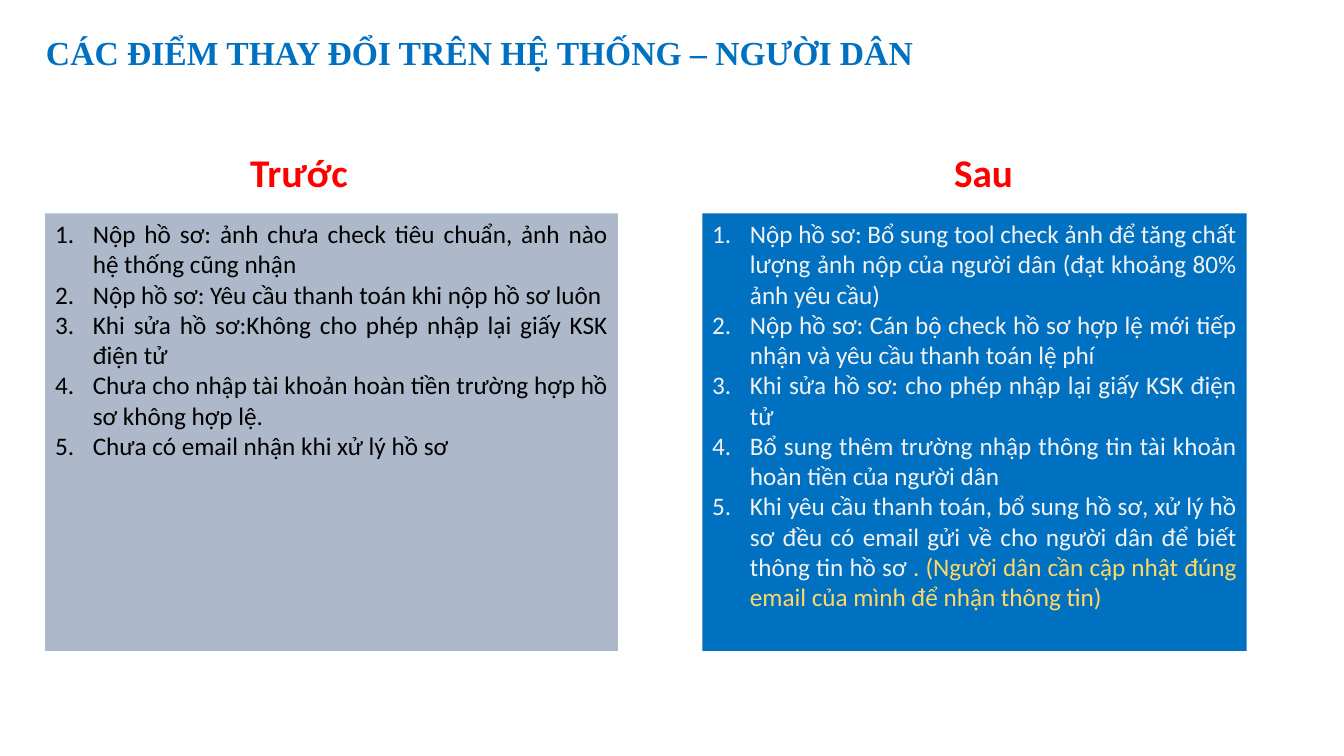
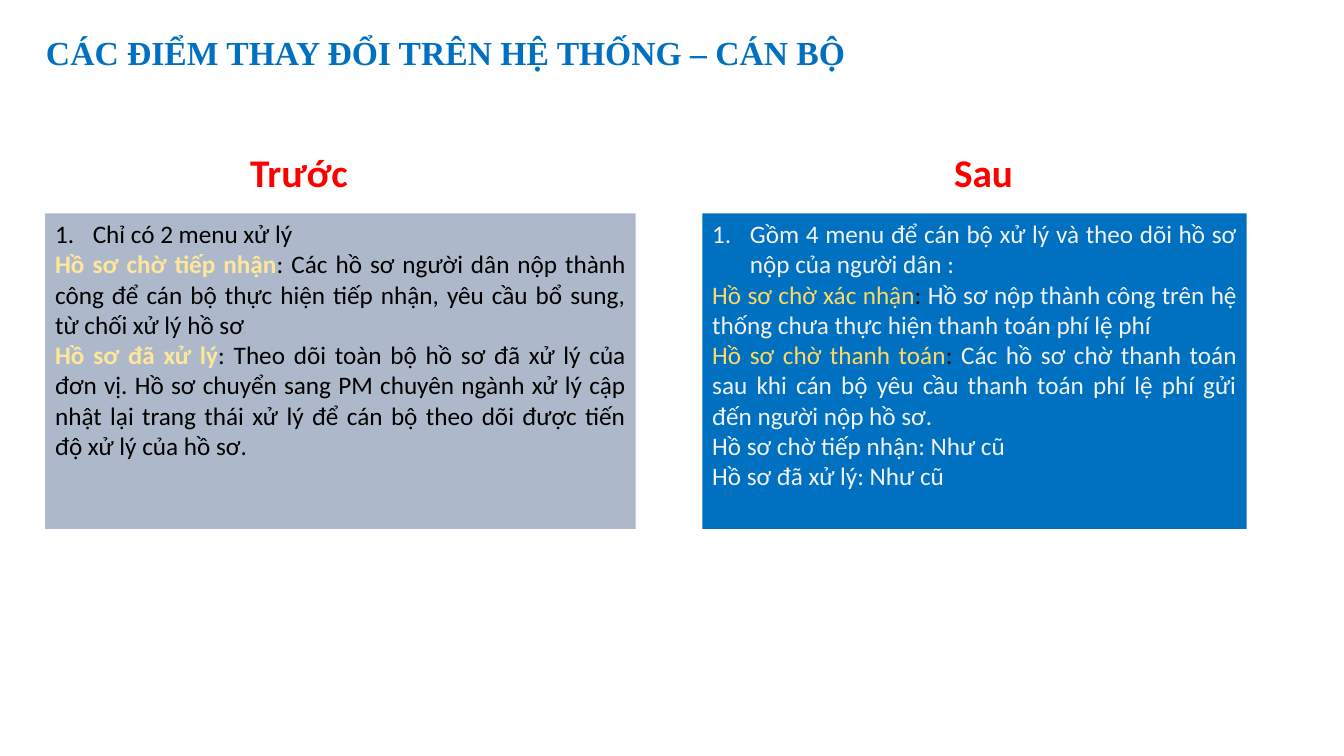
from lxml.etree import SubElement as Sub
from pptx import Presentation
from pptx.dml.color import RGBColor as RGB
from pptx.enum.shapes import MSO_SHAPE as Shape
from pptx.enum.text import MSO_ANCHOR as Anchor, PP_ALIGN as Align
from pptx.oxml.ns import qn
from pptx.util import Cm, Pt

BLUE = RGB(0x00, 0x70, 0xC0)
GRAY = RGB(0xAD, 0xB9, 0xCA)
RED = RGB(0xFF, 0x00, 0x00)
BLACK = RGB(0x00, 0x00, 0x00)
PALE = RGB(0xF2, 0xF2, 0xF2)
GOLD = RGB(0xFF, 0xD9, 0x66)
CREAM = RGB(0xFF, 0xE6, 0x99)

TITLE = {"name": "Times New Roman", "size": Pt(24), "bold": True}
HEAD = {"name": "Calibri", "size": Pt(28), "bold": True}
BODY = {"name": "Calibri", "size": Pt(18), "bold": False}
STRONG = {**BODY, "bold": True}

LEFT, RIGHT, TOP = 1.14, 17.7, 5.38
AFTER_W = 13.72
INDENT = Cm(0.95)


class Deck:
    def __init__(self):
        self.prs = Presentation()
        self.prs.slide_width, self.prs.slide_height = Cm(33.87), Cm(19.05)
        self.slide = None

    def start(self, title):
        self.slide = self.prs.slides.add_slide(self.prs.slide_layouts[6])
        frame = self.label(title, 0.91, 0.79, 32.03, 1.17, TITLE, BLUE)
        frame.vertical_anchor = Anchor.MIDDLE
        frame.paragraphs[0].line_spacing = 0.9
        self.label("Trước ", 4.37, 3.61, 6.55, 1.45, HEAD, RED, Align.CENTER)
        self.label("Sau", 21.51, 3.61, 6.55, 1.45, HEAD, RED, Align.CENTER)

    def run(self, para, text, style, ink):
        run = para.add_run()
        run.text = text
        for key, value in style.items():
            setattr(run.font, key, value)
        run.font.color.rgb = ink

    def label(self, text, x, y, w, h, style, ink, align=Align.LEFT):
        box = self.slide.shapes.add_textbox(Cm(x), Cm(y), Cm(w), Cm(h))
        frame = box.text_frame
        frame.word_wrap = True
        para = frame.paragraphs[0]
        para.alignment = align
        self.run(para, text, style, ink)
        return frame

    def number(self, para):
        """Give the paragraph a hanging automatic number."""
        props = para._p.get_or_add_pPr()
        props.set("marL", str(INDENT))
        props.set("indent", str(-INDENT))
        Sub(props, qn("a:buFont"), typeface="+mj-lt")
        Sub(props, qn("a:buAutoNum"), type="arabicPeriod")

    def panel(self, x, w, h, fill, ink, steps, notes=()):
        """Draw a filled box; each line is text or a list of runs.

        A run is text, or a tuple of text, colour and style.
        """
        box = self.slide.shapes.add_shape(
            Shape.RECTANGLE, Cm(x), Cm(TOP), Cm(w), Cm(h))
        box.shadow.inherit = False
        box.fill.solid()
        box.fill.fore_color.rgb = fill
        box.line.fill.background()
        frame = box.text_frame
        frame.word_wrap = True
        frame.vertical_anchor = Anchor.TOP
        for i, line in enumerate([*steps, *notes]):
            para = frame.add_paragraph() if i else frame.paragraphs[0]
            para.alignment = Align.JUSTIFY
            if i < len(steps):
                self.number(para)
            for part in [line] if isinstance(line, str) else line:
                text, tint, style = (
                    (part, ink, BODY) if isinstance(part, str) else part)
                self.run(para, text, style, tint)

    def before(self, w, h, steps, notes=()):
        self.panel(LEFT, w, h, GRAY, BLACK, steps, notes)

    def after(self, h, steps, notes=()):
        self.panel(RIGHT, AFTER_W, h, BLUE, PALE, steps, notes)


def citizen(deck):
    high = 11.02
    deck.start("CÁC ĐIỂM THAY ĐỔI TRÊN HỆ THỐNG – NGƯỜI DÂN")
    deck.before(14.43, high, [
        "Nộp hồ sơ: ảnh chưa check tiêu chuẩn, ảnh nào hệ thống cũng nhận",
        "Nộp hồ sơ: Yêu cầu thanh toán khi nộp hồ sơ luôn",
        "Khi sửa hồ sơ:Không cho phép nhập lại giấy KSK điện tử",
        "Chưa cho nhập tài khoản hoàn tiền trường hợp hồ sơ không hợp lệ.",
        "Chưa có email nhận khi xử lý hồ sơ",
    ])
    deck.after(high, [
        "Nộp hồ sơ: Bổ sung tool check ảnh để tăng chất lượng ảnh nộp của "
        "người dân (đạt khoảng 80% ảnh yêu cầu)",
        "Nộp hồ sơ: Cán bộ check hồ sơ hợp lệ mới tiếp nhận và yêu cầu "
        "thanh toán lệ phí",
        "Khi sửa hồ sơ: cho phép nhập lại giấy KSK điện tử",
        "Bổ sung thêm trường nhập thông tin tài khoản hoàn tiền của người dân",
        ["Khi yêu cầu thanh toán, bổ sung hồ sơ, xử lý hồ sơ đều có email "
         "gửi về cho người dân để biết thông tin hồ sơ ",
         (". (Người dân cần cập nhật đúng email của mình để nhận thông tin)",
          GOLD, BODY)],
    ])


def staff(deck):
    high = 7.95
    colon = (": ", BLACK, BODY)
    deck.start("CÁC ĐIỂM THAY ĐỔI TRÊN HỆ THỐNG – CÁN BỘ")
    deck.before(14.88, high, ["Chỉ có 2 menu xử lý"], [
        [("Hồ sơ chờ tiếp nhận", CREAM, STRONG),
         ": Các hồ sơ người dân nộp thành công để cán bộ thực hiện tiếp "
         "nhận, yêu cầu bổ sung, từ chối xử lý hồ sơ"],
        [("Hồ sơ đã xử lý", CREAM, STRONG),
         ": Theo dõi toàn bộ hồ sơ đã xử lý của đơn vị. Hồ sơ chuyển sang "
         "PM chuyên ngành xử lý cập nhật lại trang thái xử lý để cán bộ "
         "theo dõi được tiến độ xử lý của hồ sơ."],
    ])
    deck.after(high, [
        "Gồm 4 menu để cán bộ xử lý và theo dõi hồ sơ nộp của người dân :",
    ], [
        [("Hồ sơ chờ xác nhận", GOLD, BODY), colon,
         "Hồ sơ nộp thành công trên hệ thống chưa thực hiện thanh toán phí "
         "lệ phí"],
        [("Hồ sơ chờ thanh toán", GOLD, BODY), colon,
         "Các hồ sơ chờ thanh toán sau khi cán bộ yêu cầu thanh toán phí "
         "lệ phí gửi đến người nộp hồ sơ."],
        "Hồ sơ chờ tiếp nhận: Như cũ",
        "Hồ sơ đã xử lý: Như cũ",
    ])


def main():
    deck = Deck()
    citizen(deck)
    staff(deck)
    deck.prs.save("out.pptx")


if __name__ == "__main__":
    main()
